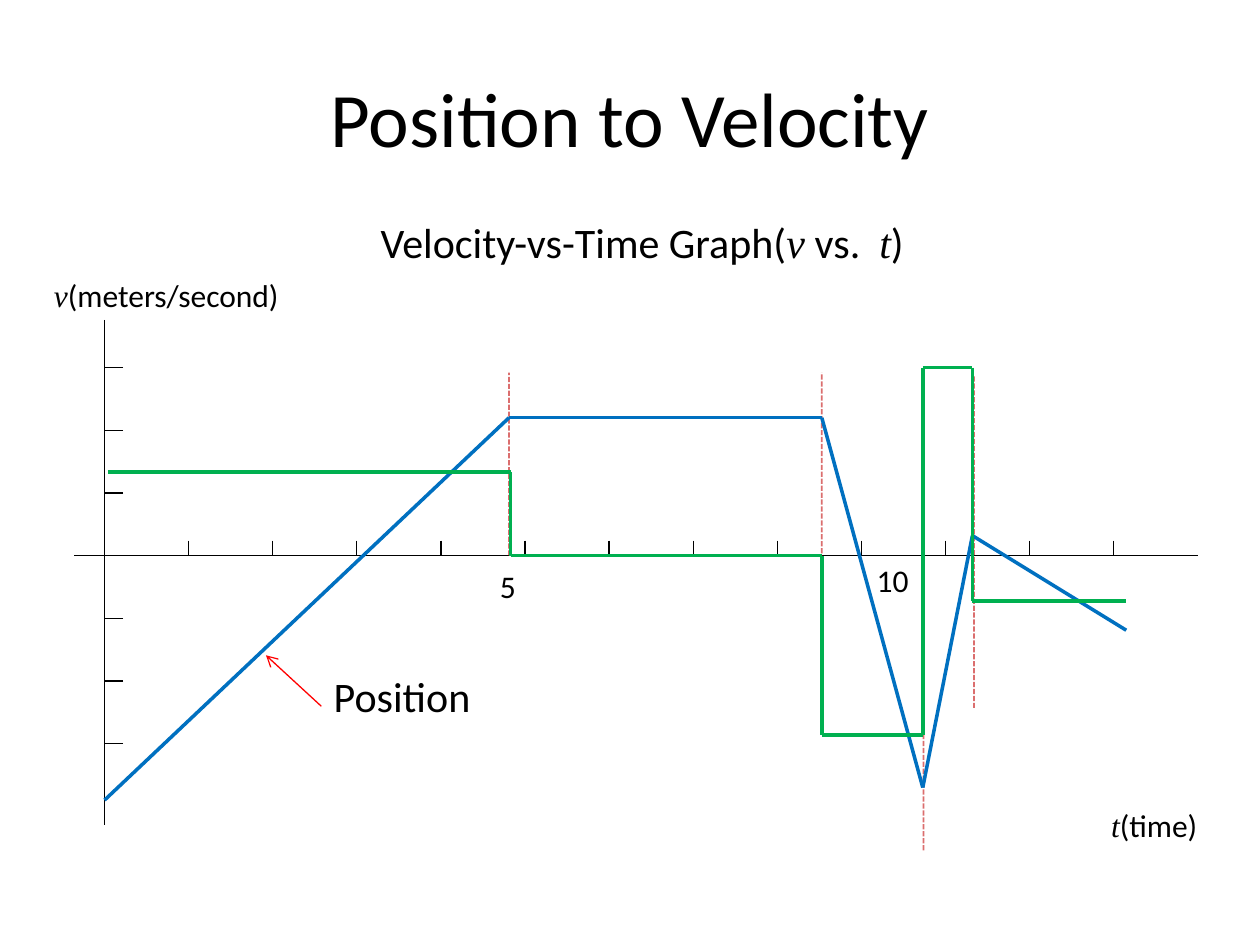
import itertools
from dataclasses import dataclass

import pptx
import pptx.util
from lxml import etree
from pptx.dml.color import RGBColor
from pptx.enum.dml import MSO_LINE
from pptx.enum.shapes import MSO_CONNECTOR
from pptx.oxml.ns import qn

WIDE, HIGH = 10, 7.5
COLORS = {
    "ink": "000000",
    "guide": "C00000",
    "arrow": "FF0000",
    "place": "0070C0",
    "speed": "00B050",
}
SANS, SERIF = "Calibri", "Times New Roman"

# Plot grid: one column is a second, one row is a unit of value
LEFT, ZERO = 0.83, 4.41
COL, ROW = 0.67 - 0.67 / 256, 0.5 - 0.5 / 200
COLS, ROWS = 12, 3

Point = tuple[float, float]


@dataclass
class Pen:
    color: str
    width: float
    dashed: bool = False


@dataclass
class Label:
    """Text with its box in percent of the slide; *starred* parts are variables."""
    text: str
    left: float
    top: float
    width: float
    height: float
    size: float = 18
    wrap: bool = False


@dataclass
class Guide:
    time: float
    low: float
    high: float


AXIS = Pen("ink", 0.75)
GUIDE = Pen("guide", 1, True)
ARROW = Pen("arrow", 0.75)

HEAD = Label("Velocity-vs-Time Graph(*v* vs.  *t*)", 29.2, 22.27, 65, 8.93, 24, True)
NAME = Label("Position", 25.5, 70.27, 12.9, 8.93, 24, True)
LABELS = [
    Label("*t*(time)", 87.2, 84.67, 9.1, 5.33),
    Label("5", 38.7, 59.33, 3.3, 5.33),
    Label("10", 68.6, 58.67, 4.6, 5.33),
    Label("*v*(meters/second)", 3.3, 28.53, 20.1, 5.33),
]
GUIDES = [
    Guide(4.81, 0, 2.92),
    Guide(8.53, -2.4, 2.92),
    Guide(9.74, -4.7, 0.6),
    Guide(10.34, -2.43, 2.88),
]
PLACE = [(0, -3.9), (4.81, 2.2), (8.53, 2.2), (9.73, -3.7), (10.32, 0.32), (12.15, -1.19)]
STEPS = [
    (0.04, 4.83, 1.33),
    (4.83, 8.53, 0),
    (8.53, 9.73, -2.86),
    (9.73, 10.32, 3),
    (10.32, 12.15, -0.72),
]
SPEED = [(time, value) for start, end, value in STEPS for time in (start, end)]


def share(label: Label) -> list[int]:
    """Turn the percent box of a label into slide lengths."""
    box = (label.left, label.top, label.width, label.height)
    return [pptx.util.Inches(part * side / 100)
            for part, side in zip(box, (WIDE, HIGH, WIDE, HIGH))]


def spot(point: Point) -> Point:
    """Turn a time and a value into slide lengths."""
    time, value = point
    return pptx.util.Inches(LEFT + time * COL), pptx.util.Inches(ZERO - value * ROW)


def draw(shapes, start: Point, end: Point, pen: Pen):
    line = shapes.add_connector(MSO_CONNECTOR.STRAIGHT, *spot(start), *spot(end))
    line.line.color.rgb = RGBColor.from_string(COLORS[pen.color])
    line.line.width = pptx.util.Pt(pen.width)
    props = line._element.spPr
    if pen.dashed:
        line.line.dash_style = MSO_LINE.SQUARE_DOT
        color = props.find(".//" + qn("a:srgbClr"))
        etree.SubElement(color, qn("a:alpha"), val="56000")
    etree.SubElement(props, qn("a:effectLst"))
    return line


def curve(slide, points: list[Point], pen: Pen) -> None:
    group = slide.shapes.add_group_shape()
    for start, end in itertools.pairwise(points):
        draw(group.shapes, start, end, pen)


def write(shape, label: Label) -> None:
    shape.left, shape.top, shape.width, shape.height = share(label)
    frame = shape.text_frame
    frame.word_wrap = label.wrap
    para = frame.paragraphs[0]
    para.font.color.rgb = RGBColor.from_string(COLORS["ink"])
    for index, part in enumerate(label.text.split("*")):
        if part:
            run = para.add_run()
            run.text = part
            run.font.size = pptx.util.Pt(label.size)
            run.font.italic = index % 2 == 1
            run.font.name = SERIF if run.font.italic else SANS


def note(slide, label: Label):
    box = slide.shapes.add_textbox(*share(label))
    write(box, label)
    return box


def axes(slide) -> None:
    draw(slide.shapes, (0, 3.76), (0, -4.3), AXIS)
    draw(slide.shapes, (13, 0), (-0.36, 0), AXIS)
    for value in range(-ROWS, ROWS + 1):
        draw(slide.shapes, (0.22, value), (0, value), AXIS)
    for time in range(1, COLS + 1):
        draw(slide.shapes, (time, 0.24), (time, 0), AXIS)


def main() -> None:
    deck = pptx.Presentation()
    deck.slide_width = pptx.util.Inches(WIDE)
    deck.slide_height = pptx.util.Inches(HIGH)
    slide = deck.slides.add_slide(deck.slide_layouts[1])

    write(slide.shapes.title, Label("Position to Velocity", 5, 4, 90, 16.67, 44, True))
    body = slide.placeholders[1]
    write(body, HEAD)
    props = body.text_frame.paragraphs[0]._p.get_or_add_pPr()
    props.set("marL", "0")
    props.set("indent", "0")
    props.insert(0, etree.Element(qn("a:buNone")))

    axes(slide)
    for label in LABELS:
        note(slide, label)
    for guide in GUIDES:
        draw(slide.shapes, (guide.time, guide.low), (guide.time, guide.high), GUIDE)

    name = note(slide, NAME)
    name.text_frame.paragraphs[0].space_before = pptx.util.Pt(4.8)
    arrow = draw(slide.shapes, (2.58, -2.4), (1.92, -1.59), ARROW)
    arrow.begin_connect(name, 1)
    etree.SubElement(arrow.line._get_or_add_ln(), qn("a:tailEnd"), type="arrow")

    curve(slide, PLACE, Pen("place", 2))
    curve(slide, SPEED, Pen("speed", 2))
    deck.save("out.pptx")


if __name__ == "__main__":
    main()
